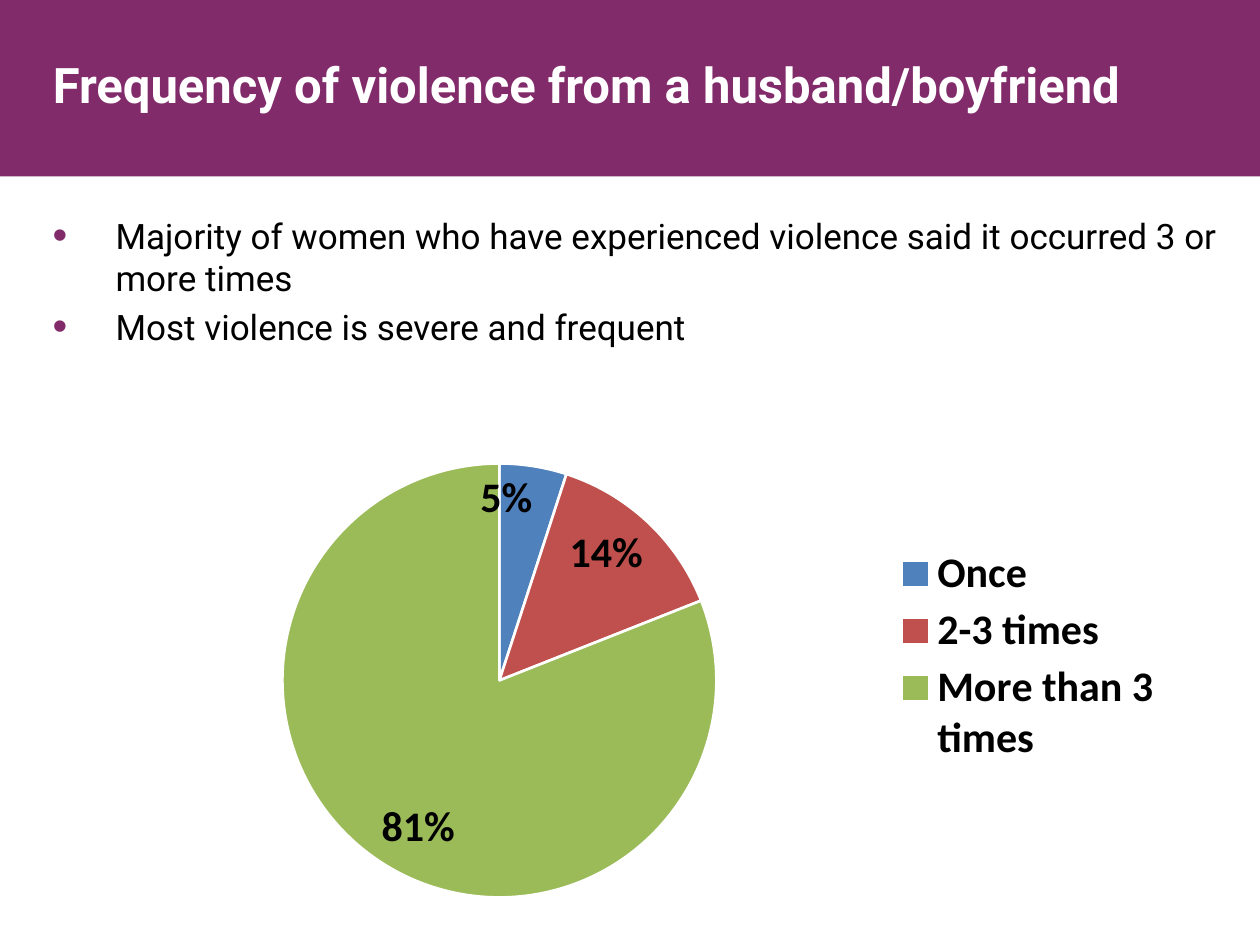
from lxml.etree import SubElement
from pptx import Presentation
from pptx.chart.data import CategoryChartData
from pptx.dml.color import RGBColor
from pptx.enum.chart import XL_CHART_TYPE, XL_LABEL_POSITION, XL_LEGEND_POSITION
from pptx.enum.shapes import MSO_SHAPE
from pptx.enum.text import MSO_ANCHOR, MSO_AUTO_SIZE, PP_ALIGN
from pptx.oxml.ns import qn
from pptx.util import Cm, Pt

COLORS = {
    "plum": "822B6A",
    "white": "FFFFFF",
    "black": "000000",
    "once": "4F81BD",
    "few": "C0504D",
    "many": "9BBB59",
}
BULLETS = [
    "Majority of women who have experienced violence said it occurred 3 or more times",
    "Most violence is severe and frequent",
]
FREQUENCIES = [
    ("Once", 0.05, "once"),
    ("2-3 times", 0.14, "few"),
    ("More than 3 times", 0.81, "many"),
]


def rgb(name):
    return RGBColor.from_string(COLORS[name])


def style_font(font, name, size, color, bold=False):
    font.name = name
    font.size = Pt(size)
    font.bold = bold
    font.color.rgb = rgb(color)


def add_run(p, text, size, color, bold=False):
    r = p.add_run()
    r.text = text
    style_font(r.font, "Roboto", size, color, bold)


def add_band(s, width):
    sp = s.shapes.add_shape(MSO_SHAPE.RECTANGLE, 0, 0, width, Cm(3.56))
    sp.shadow.inherit = False
    sp.fill.solid()
    sp.fill.fore_color.rgb = rgb("plum")
    sp.line.fill.background()
    s.shapes._spTree.insert(2, sp._element)


def set_title(s, text):
    sp = s.shapes.title
    sp.left, sp.top, sp.width, sp.height = Cm(0.81), Cm(0.97), Cm(23.62), Cm(1.73)
    tf = sp.text_frame
    tf.word_wrap = True
    tf.auto_size = MSO_AUTO_SIZE.NONE
    tf.vertical_anchor = MSO_ANCHOR.TOP
    p = tf.paragraphs[0]
    p.alignment = PP_ALIGN.LEFT
    add_run(p, text, 28, "white", True)


def set_bullet(p):
    pPr = p._p.get_or_add_pPr()
    pPr.set("marL", str(Cm(1.27)))
    pPr.set("indent", str(-Cm(1.27)))
    color = SubElement(pPr, qn("a:buClr"))
    SubElement(color, qn("a:srgbClr"), val=COLORS["plum"])
    SubElement(pPr, qn("a:buSzPct"), val="120000")
    SubElement(pPr, qn("a:buFont"), typeface="Arial")
    SubElement(pPr, qn("a:buChar"), char="•")


def add_bullets(s, items):
    sp = s.shapes.add_textbox(Cm(0.81), Cm(4.19), Cm(24.33), Cm(11.89))
    sp.fill.solid()
    sp.fill.fore_color.rgb = rgb("white")
    tf = sp.text_frame
    tf.word_wrap = True
    for i, text in enumerate(items):
        p = tf.add_paragraph() if i else tf.paragraphs[0]
        p.space_before = Pt(4)
        set_bullet(p)
        add_run(p, text, 20, "black")


def set_layout(element, x, y, w, h, inner=False):
    layout = element.find(qn("c:layout"))
    if layout is None:
        layout = element.makeelement(qn("c:layout"))
        position = element.find(qn("c:legendPos"))
        element.insert(0 if position is None else 1, layout)
    manual = SubElement(layout, qn("c:manualLayout"))
    if inner:
        SubElement(manual, qn("c:layoutTarget"), val="inner")
    for tag in ("xMode", "yMode"):
        SubElement(manual, qn(f"c:{tag}"), val="edge")
    for tag, value in zip("xywh", (x, y, w, h)):
        SubElement(manual, qn(f"c:{tag}"), val=str(value))


def add_pie(s, rows):
    data = CategoryChartData(number_format="0%")
    data.categories = [label for label, _, _ in rows]
    data.add_series("Series 1", [value for _, value, _ in rows])
    chart = s.shapes.add_chart(
        XL_CHART_TYPE.PIE, Cm(3.2), Cm(7.85), Cm(20.5), Cm(10.67), data
    ).chart
    chart.has_title = False
    style_font(chart.font, "Calibri", 10, "black")

    plot = chart.plots[0]
    plot.vary_by_categories = True
    for i, (_, _, color) in enumerate(rows):
        fmt = plot.series[0].points[i].format
        fmt.fill.solid()
        fmt.fill.fore_color.rgb = rgb(color)
        fmt.line.color.rgb = rgb("white")
        fmt.line.width = Pt(1.5)

    plot.has_data_labels = True
    labels = plot.data_labels
    labels.show_value = True
    labels.show_percentage = False
    labels.number_format = "0%"
    labels.number_format_is_linked = False
    labels.position = XL_LABEL_POSITION.INSIDE_END
    style_font(labels.font, "Calibri", 24, "black", True)

    chart.has_legend = True
    legend = chart.legend
    legend.position = XL_LEGEND_POSITION.RIGHT
    legend.include_in_layout = False
    style_font(legend.font, "Calibri", 24, "black", True)
    set_layout(chart._chartSpace.chart.plotArea, 0.12, 0.14, 0.43, 0.82, inner=True)
    set_layout(legend._element, 0.72, 0.29, 0.27, 0.43)


def main():
    prs = Presentation()
    prs.slide_width, prs.slide_height = Cm(25.4), Cm(19.05)
    s = prs.slides.add_slide(prs.slide_layouts[5])
    add_band(s, prs.slide_width)
    set_title(s, "Frequency of violence from a husband/boyfriend")
    add_bullets(s, BULLETS)
    add_pie(s, FREQUENCIES)
    prs.save("out.pptx")


if __name__ == "__main__":
    main()
